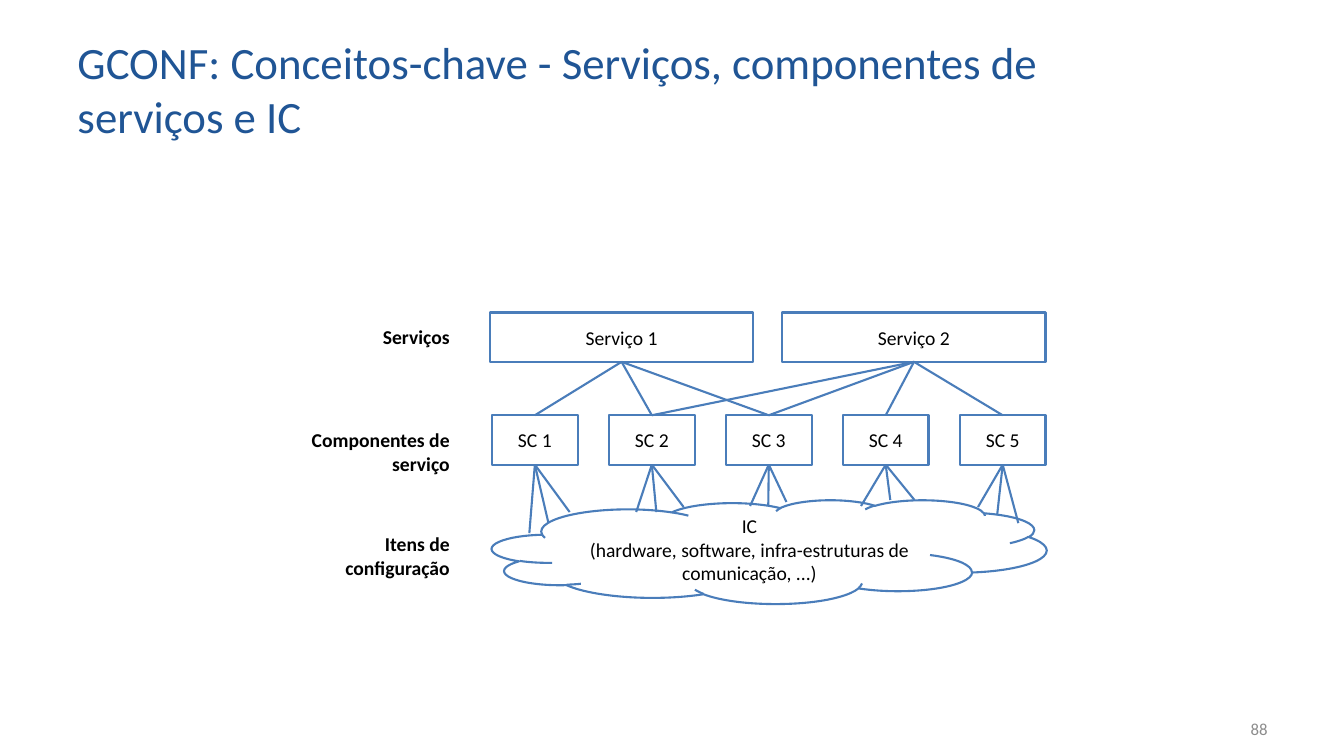
"""Build the slide on services, service components and configuration items."""
from lxml.etree import SubElement
from pptx import Presentation
from pptx.dml.color import RGBColor
from pptx.enum.shapes import MSO_CONNECTOR, MSO_SHAPE
from pptx.enum.text import MSO_ANCHOR, PP_ALIGN
from pptx.oxml.ns import qn
from pptx.util import Inches, Pt

NAVY = RGBColor(0x20, 0x55, 0x95)
BLUE = RGBColor(0x4A, 0x7D, 0xBA)
GREY = RGBColor(0x8C, 0x8C, 0x8C)
BLACK = RGBColor(0, 0, 0)


class Sketch:
    font = "Calibri"
    width = Pt(1.5)

    def __init__(self, slide):
        self.slide = slide

    def letter(self, frame, lines, size, color, align, anchor, bold=False):
        frame.word_wrap = True
        frame.vertical_anchor = anchor
        for i, line in enumerate(lines):
            para = frame.add_paragraph() if i else frame.paragraphs[0]
            para.alignment = align
            run = para.add_run()
            run.text = line
            run.font.name = self.font
            run.font.size = Pt(size)
            run.font.bold = bold
            run.font.color.rgb = color

    def text(self, area, line, size, color, align=PP_ALIGN.RIGHT,
             anchor=MSO_ANCHOR.MIDDLE, bold=False):
        box = self.slide.shapes.add_textbox(*map(Inches, area))
        self.letter(box.text_frame, [line], size, color, align, anchor, bold)

    def shape(self, kind, area, *lines):
        shape = self.slide.shapes.add_shape(kind, *map(Inches, area))
        shape.shadow.inherit = False
        shape.fill.background()
        shape.line.color.rgb = BLUE
        shape.line.width = self.width
        self.letter(shape.text_frame, lines, 14, BLACK,
                    PP_ALIGN.CENTER, MSO_ANCHOR.MIDDLE)
        return shape

    def link(self, start, side, end=None, point=(0, 0)):
        x, y = map(Inches, point)
        line = self.slide.shapes.add_connector(MSO_CONNECTOR.STRAIGHT, x, y, x, y)
        line.begin_connect(start, side)
        if end is not None:
            line.end_connect(end, 2)
        line.line.color.rgb = BLUE
        line.line.width = self.width
        SubElement(line._element.spPr, qn("a:effectLst"))


def main():
    deck = Presentation()
    deck.slide_width, deck.slide_height = Inches(13.33), Inches(7.5)
    sketch = Sketch(deck.slides.add_slide(deck.slide_layouts[6]))

    sketch.text((0.67, 0.3, 9.91, 1.15),
                "GCONF: Conceitos-chave - Serviços, componentes de serviços e IC",
                32, NAVY, PP_ALIGN.LEFT)
    sketch.text((9.56, 7.03, 3.11, 0.4), "88", 12, GREY)

    sketch.shape(MSO_SHAPE.CLOUD, (4.88, 4.96, 5.5, 1.03), "IC",
                 "(hardware, software, infra-estruturas de comunicação, ...)")
    tops = [sketch.shape(MSO_SHAPE.RECTANGLE, (4.86 + 2.9 * i, 3.1, 2.61, 0.49),
                         f"Serviço {i + 1}") for i in range(2)]
    parts = [sketch.shape(MSO_SHAPE.RECTANGLE, (4.88 + 1.16 * i, 4.12, 0.85, 0.49),
                          f"SC {i + 1}") for i in range(5)]

    for top, used in zip(tops, [(0, 1, 2), (1, 2, 3, 4)]):
        for i in used:
            sketch.link(parts[i], 0, top)

    feet = [
        [(5.25, 5.29), (5.44, 5.19), (5.65, 5.08)],
        [(6.31, 5.08), (6.51, 5.08), (6.78, 5.03)],
        [(7.44, 5.02), (7.62, 5.02), (7.8, 4.98)],
        [(8.54, 5.02), (8.83, 4.96), (9.07, 4.96)],
        [(9.7, 5.03), (9.89, 5.11), (10.1, 5.19)],
    ]
    for part, points in zip(parts, feet):
        for point in points:
            sketch.link(part, 2, point=point)

    labels = ["Serviços", "Componentes de serviço", "Itens de configuração"]
    for i, label in enumerate(labels):
        sketch.text((2.7, 3.17 + 1.03 * i, 1.86, 0.34), label, 14, BLACK,
                    anchor=MSO_ANCHOR.TOP, bold=True)

    deck.save("out.pptx")


if __name__ == "__main__":
    main()
